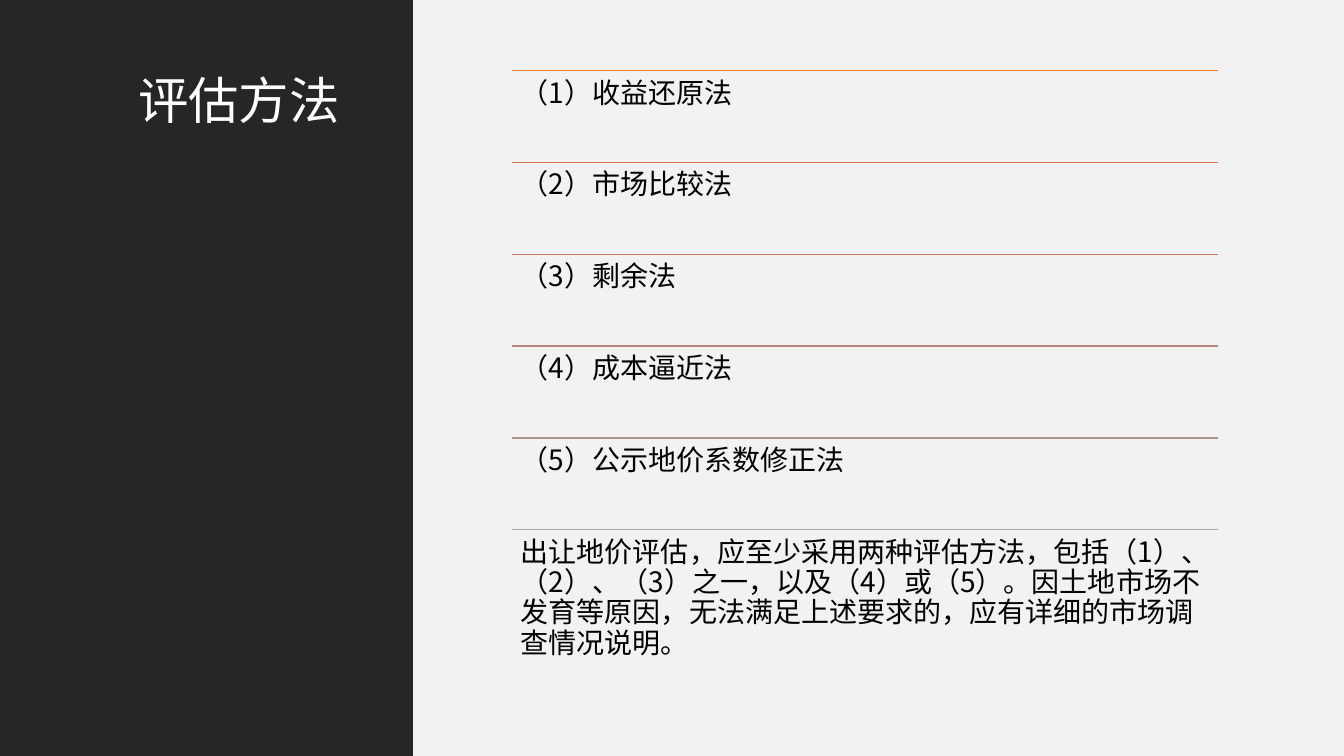
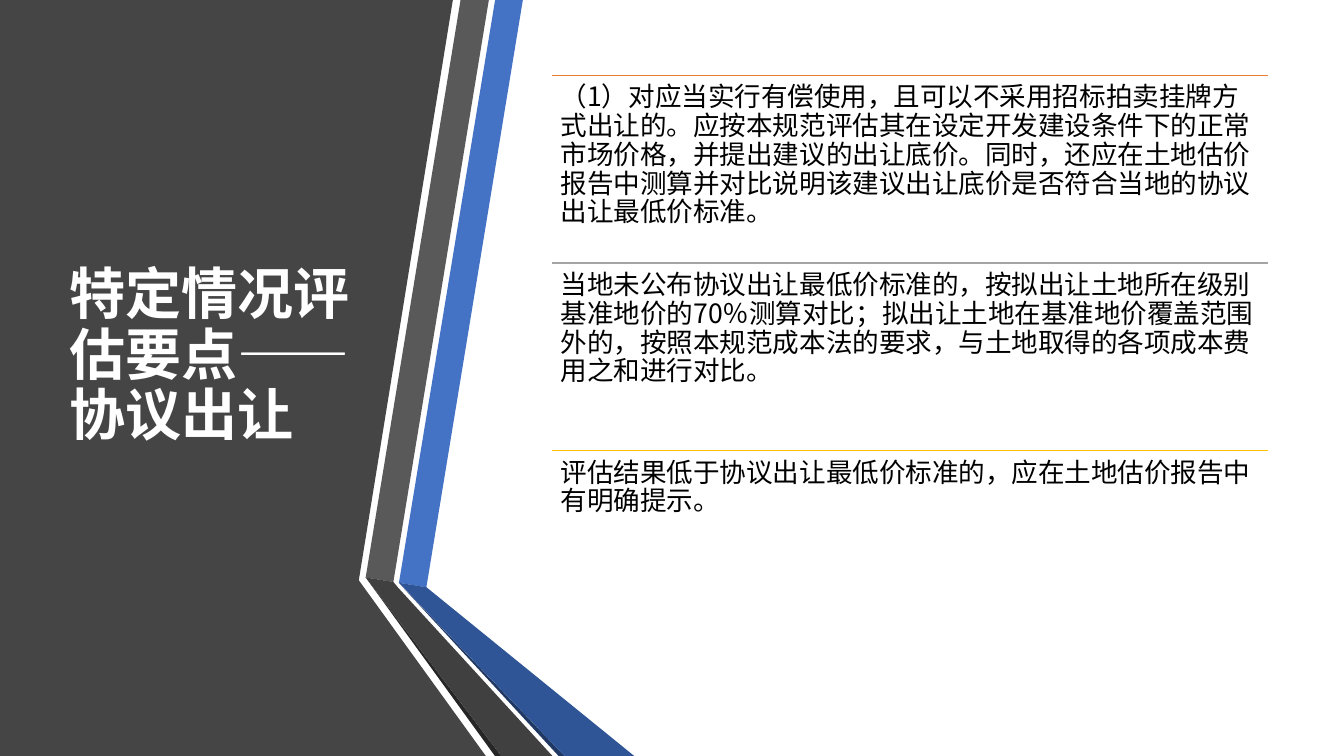
import pptx
import pptx.dml.color
import pptx.enum.shapes
import pptx.enum.text
import pptx.oxml.ns
import pptx.util
from lxml import etree

Pt = pptx.util.Pt
RGB = pptx.dml.color.RGBColor
ANCHOR = pptx.enum.text.MSO_ANCHOR
WHITE = RGB(0xFF, 0xFF, 0xFF)
BLACK = RGB(0x00, 0x00, 0x00)
PALE = RGB(0xF2, 0xF2, 0xF2)
INK = RGB(0x26, 0x26, 0x26)
CHARCOAL = RGB(0x45, 0x45, 0x45)
SLATE = RGB(0x59, 0x59, 0x59)
DARK_SLATE = RGB(0x40, 0x40, 0x40)
BLUE = RGB(0x44, 0x72, 0xC4)
DARK_BLUE = RGB(0x2F, 0x55, 0x97)
NAVY = RGB(0x20, 0x38, 0x64)
ORANGE = RGB(0xED, 0x7D, 0x31)
COPPER = RGB(0xDC, 0x7A, 0x4B)
CLAY = RGB(0xCC, 0x7D, 0x64)
ROSE = RGB(0xBD, 0x86, 0x7B)
MAUVE = RGB(0xB0, 0x93, 0x91)
GRAY = RGB(0xA5, 0xA5, 0xA5)
GOLD = RGB(0xFF, 0xC0, 0x00)

METHODS = [
    (ORANGE, "（1）收益还原法"),
    (COPPER, "（2）市场比较法"),
    (CLAY, "（3）剩余法"),
    (ROSE, "（4）成本逼近法"),
    (MAUVE, "（5）公示地价系数修正法"),
    (GRAY, "出让地价评估，应至少采用两种评估方法，包括（1）、（2）、（3）之一，以及（4）或（5）。"
           "因土地市场不发育等原因，无法满足上述要求的，应有详细的市场调查情况说明。"),
]
KEY_POINTS = [
    (ORANGE, "（1）对应当实行有偿使用，且可以不采用招标拍卖挂牌方式出让的。"
             "应按本规范评估其在设定开发建设条件下的正常市场价格，并提出建议的出让底价。"
             "同时，还应在土地估价报告中测算并对比说明该建议出让底价是否符合当地的协议出让最低价标准。"),
    (GRAY, "当地未公布协议出让最低价标准的，按拟出让土地所在级别基准地价的70％测算对比；"
           "拟出让土地在基准地价覆盖范围外的，按照本规范成本法的要求，与土地取得的各项成本费用之和进行对比。"),
    (GOLD, "评估结果低于协议出让最低价标准的，应在土地估价报告中有明确提示。"),
]
RIBBONS = [
    (CHARCOAL, [(0, 0), (323.5, 0), (256.3, 414.5), (347, 540), (0, 540)]),
    (BLUE, [(285, 416.3), (304.6, 419.5), (373.5, 0), (353.7, 0)]),
    (SLATE, [(349.2, 0), (329, 0), (261.2, 412.5), (281, 415.7)]),
    (INK, [(261.2, 412.5), (353.5, 540), (358, 540)]),
    (NAVY, [(285.2, 416.7), (399, 540), (403.2, 540)]),
    (DARK_BLUE, [(285, 416.3), (403.2, 540), (453, 540), (304.6, 419.5)]),
    (DARK_SLATE, [(261.2, 412.5), (358, 540), (394.6, 540), (284.4, 419.8), (281, 415.7)]),
]


class Deck:
    """Holds the shared style and the current slide."""

    FONT = "Noto Sans CJK SC"
    FRAME = {"word_wrap": True, "auto_size": pptx.enum.text.MSO_AUTO_SIZE.NONE}
    INSET = dict.fromkeys(("margin_left", "margin_top", "margin_right", "margin_bottom"), Pt(6))

    def __init__(self):
        self.prs = pptx.Presentation()
        self.prs.slide_width, self.prs.slide_height = Pt(960), Pt(540)
        self.s = None

    def slide(self):
        self.s = self.prs.slides.add_slide(self.prs.slide_layouts[5])

    def text(self, tf, content, color, size, bold=False, **frame):
        for key, value in {**self.FRAME, **frame}.items():
            setattr(tf, key, value)
        p = tf.paragraphs[0]
        p.alignment = pptx.enum.text.PP_ALIGN.LEFT
        p.line_spacing = 0.9
        r = p.add_run()
        r.text = content
        for key, value in {"name": self.FONT, "size": Pt(size), "bold": bold}.items():
            setattr(r.font, key, value)
        r.font.color.rgb = color
        ea = etree.SubElement(r.font._element, pptx.oxml.ns.qn("a:ea"))
        ea.set("typeface", self.FONT)

    def title(self, content, x, y, w, h, size, anchor, bold=False):
        sp = self.s.shapes.title
        box = {"left": x, "top": y, "width": w, "height": h}
        for key, value in box.items():
            setattr(sp, key, Pt(value))
        self.text(sp.text_frame, content, WHITE, size, bold, vertical_anchor=anchor)
        sp.element.getparent().append(sp.element)

    def paint(self, sp, color):
        sp.shadow.inherit = False
        sp.fill.solid()
        sp.fill.fore_color.rgb = color
        sp.line.fill.background()

    def panel(self, color, x, w):
        rect = pptx.enum.shapes.MSO_SHAPE.RECTANGLE
        self.paint(self.s.shapes.add_shape(rect, Pt(x), 0, Pt(w), Pt(540)), color)

    def polygon(self, color, points):
        start, *rest = [(Pt(x), Pt(y)) for x, y in points]
        builder = self.s.shapes.build_freeform(*start)
        builder.add_line_segments(rest, close=True)
        self.paint(builder.convert_to_shape(), color)

    def rule(self, color, x, y, w):
        line = self.s.shapes.add_connector(
            pptx.enum.shapes.MSO_CONNECTOR.STRAIGHT, Pt(x), Pt(y), Pt(x + w), Pt(y))
        line.line.color.rgb = color
        line.line.width = Pt(1)
        etree.SubElement(line.element.spPr, pptx.oxml.ns.qn("a:effectLst"))

    def ruled_list(self, items, x, y, w, step, size):
        for i, (color, content) in enumerate(items):
            top = y + i * step
            self.rule(color, x, top, w)
            sp = self.s.shapes.add_textbox(Pt(x), Pt(top), Pt(w), Pt(step))
            self.text(sp.text_frame, content, BLACK, size, vertical_anchor=ANCHOR.TOP, **self.INSET)


def main():
    deck = Deck()

    deck.slide()
    deck.panel(PALE, 294.5, 665.5)
    deck.panel(INK, 0, 295)
    deck.title("评估方法", 91.5, 50.4, 173, 439, 36, ANCHOR.TOP)
    deck.ruled_list(METHODS, 366, 50.4, 504, 65.6, 20)

    deck.slide()
    for color, points in RIBBONS:
        deck.polygon(color, points)
    deck.title("特定情况评估要点——协议出让", 42.5, 54, 219, 402, 40, ANCHOR.MIDDLE, bold=True)
    deck.ruled_list(KEY_POINTS, 394.5, 54, 511, 134, 19)

    deck.prs.save("out.pptx")


if __name__ == "__main__":
    main()
